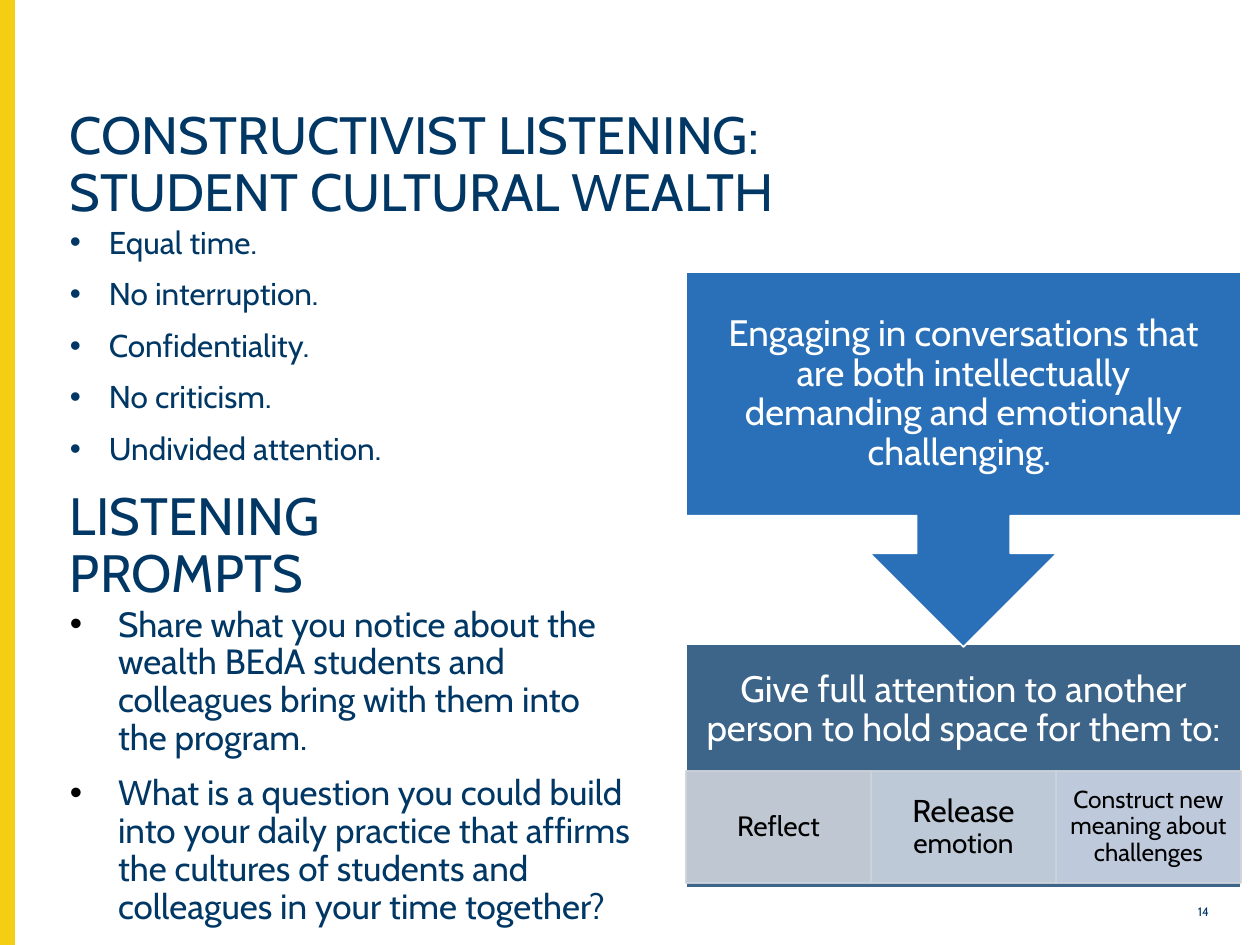
from pptx import Presentation
from pptx.dml.color import RGBColor
from pptx.enum.shapes import MSO_SHAPE as SHAPE
from pptx.enum.text import MSO_ANCHOR as ANCHOR, MSO_AUTO_SIZE as AUTO, PP_ALIGN as ALIGN
from pptx.oxml.ns import qn
from pptx.util import Pt
from lxml.etree import SubElement

PX = 914400 // 126
NAVY, WHITE, BLACK = "003764", "FFFFFF", "000000"
YELLOW, BLUE, SLATE, PALE = "F4CE12", "2A70B8", "3D6489", "CED3DA"


def rgb(value):
    return RGBColor.from_string(value)


def px(*values):
    return [v * PX for v in values]


class Deck:
    font = "Cabin"
    spacing = 0.9

    def __init__(self, width, height):
        self.prs = Presentation()
        self.prs.slide_width, self.prs.slide_height = px(width, height)
        self.slide = self.prs.slides.add_slide(self.prs.slide_layouts[5])

    def set_text(self, s, paragraphs, size, color, align=ALIGN.LEFT, anchor=ANCHOR.TOP, inset=(13, 6)):
        tf = s.text_frame
        tf.text = "\n".join(paragraphs)
        tf.word_wrap = True
        tf.auto_size = AUTO.NONE
        tf.vertical_anchor = anchor
        tf.margin_left = tf.margin_right = inset[0] * PX
        tf.margin_top = tf.margin_bottom = inset[1] * PX
        for p in tf.paragraphs:
            p.alignment = align
            p.line_spacing = self.spacing
            for r in p.runs:
                self.style(r, size, color)
        return tf

    def style(self, r, size, color):
        r.font.name = self.font
        r.font.size = Pt(size)
        r.font.color.rgb = rgb(color)

    def title(self, box, text, size):
        s = self.slide.shapes.title
        s.left, s.top, s.width, s.height = px(*box)
        self.set_text(s, [text], size, NAVY, anchor=ANCHOR.BOTTOM)

    def text(self, box, text, size, color, **layout):
        s = self.slide.shapes.add_textbox(*px(*box))
        return self.set_text(s, [text], size, color, **layout)

    def bullets(self, box, items, size, indent, bullet_color):
        s = self.slide.shapes.add_textbox(*px(*box))
        tf = self.set_text(s, items, size, NAVY)
        for i, p in enumerate(tf.paragraphs):
            pPr = p._p.get_or_add_pPr()
            pPr.set("marL", str(indent * PX))
            pPr.set("indent", str(-indent * PX))
            color = SubElement(pPr, qn("a:buClr"))
            SubElement(color, qn("a:srgbClr"), val=bullet_color)
            SubElement(pPr, qn("a:buFont"), typeface="Arial")
            SubElement(pPr, qn("a:buChar"), char="•")
            if i:
                p.space_before = Pt(10)

    def shape(self, kind, box, fill, line, opacity=100, rotation=0):
        s = self.slide.shapes.add_shape(kind, *px(*box))
        s.shadow.inherit = False
        s.rotation = rotation
        s.fill.solid()
        s.fill.fore_color.rgb = rgb(fill)
        s.line.color.rgb = rgb(line)
        s.line.width = Pt(1)
        if opacity < 100:
            for color in s._element.spPr.iter(qn("a:srgbClr")):
                SubElement(color, qn("a:alpha"), val=str(opacity * 1000))
        return s

    def cell(self, box, fill, text, size, inset):
        s = self.shape(SHAPE.RECTANGLE, box, fill, PALE, opacity=90)
        return self.set_text(s, [text], size, BLACK, ALIGN.CENTER, ANCHOR.MIDDLE, inset)


def main():
    deck = Deck(1260, 945)
    deck.shape(SHAPE.RECTANGLE, (0, 0, 14, 945), YELLOW, YELLOW)
    deck.title((57, 35, 816, 194), "CONSTRUCTIVIST LISTENING: STUDENT CULTURAL WEALTH", 30)
    rules = ["Equal time.", "No interruption.", "Confidentiality.", "No criticism.", "Undivided attention."]
    deck.bullets((57, 221, 478, 328), rules, 18, 39, NAVY)
    deck.text((1159, 900, 63, 26), "14", 7, NAVY, align=ALIGN.RIGHT)

    left, width = 686, 555
    centred = dict(align=ALIGN.CENTER, anchor=ANCHOR.MIDDLE, inset=(20, 20))
    deck.shape(SHAPE.RECTANGLE, (left, 644, width, 244), SLATE, WHITE)
    deck.text((left, 644, width, 132),
              "Give full attention to another person to hold space for them to:", 21, WHITE, **centred)

    cells = [
        ("Reflect", 16, "CED3DA", (15, 3)),
        ("Release", 18, "CDD4E0", (18, 4)),
        ("Construct new meaning about challenges", 14, "CDD5E6", (14, 3)),
    ]
    cell_width = width // len(cells)
    frames = [deck.cell((left + i * cell_width, 771, cell_width, 112), fill, text, size, inset)
              for i, (text, size, fill, inset) in enumerate(cells)]
    r = frames[1].paragraphs[0].add_run()
    r.text = " emotion"
    deck.style(r, 16, BLACK)

    deck.shape(SHAPE.UP_ARROW_CALLOUT, (left, 272, width, 375), BLUE, WHITE, rotation=180)
    deck.text((left, 272, width, 244),
              "Engaging in conversations that are both intellectually demanding and emotionally challenging. ",
              21, WHITE, **centred)

    deck.text((57, 476, 436, 134), "LISTENING PROMPTS", 30, NAVY, anchor=ANCHOR.BOTTOM)
    prompts = [
        "Share what you notice about the wealth BEdA students and colleagues bring with them into the program.",
        "What is a question you could build into your daily practice that affirms the cultures of students "
        "and colleagues in your time together?",
    ]
    deck.bullets((57, 601, 587, 344), prompts, 20, 48, BLACK)
    deck.prs.save("out.pptx")


if __name__ == "__main__":
    main()
